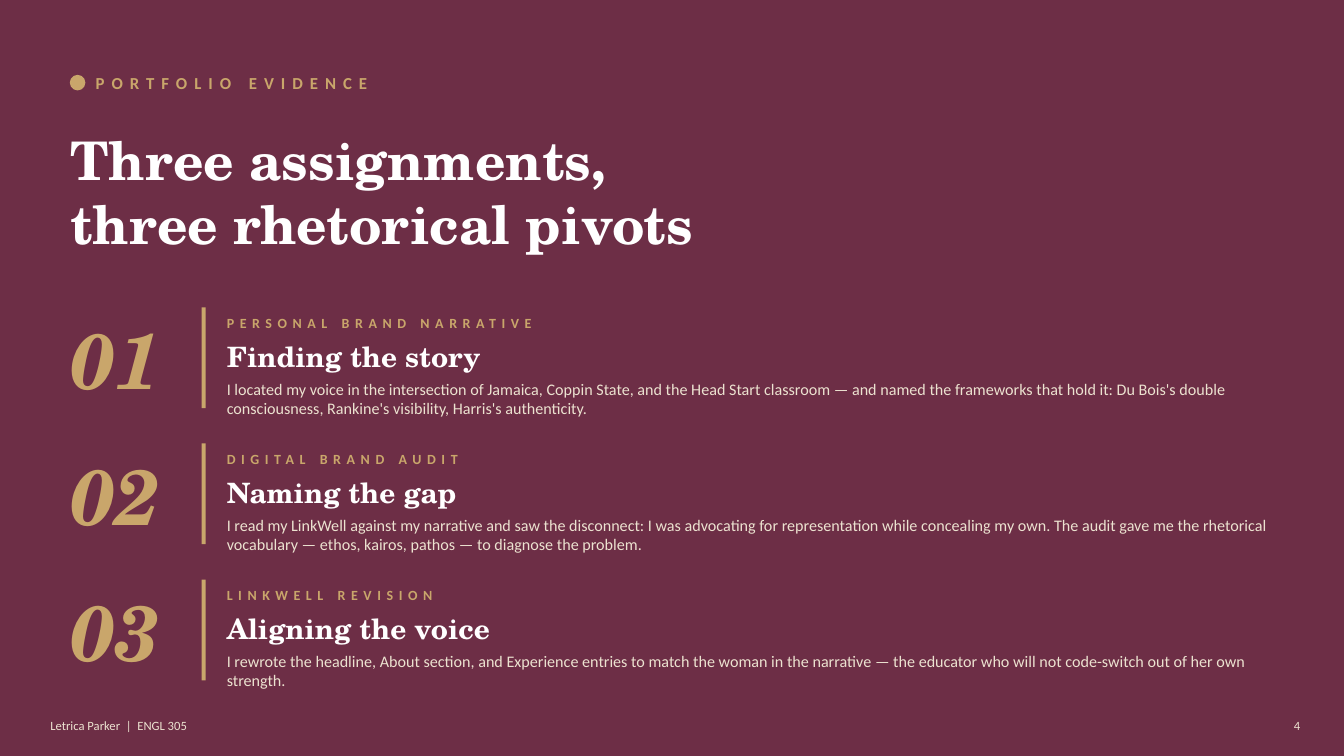
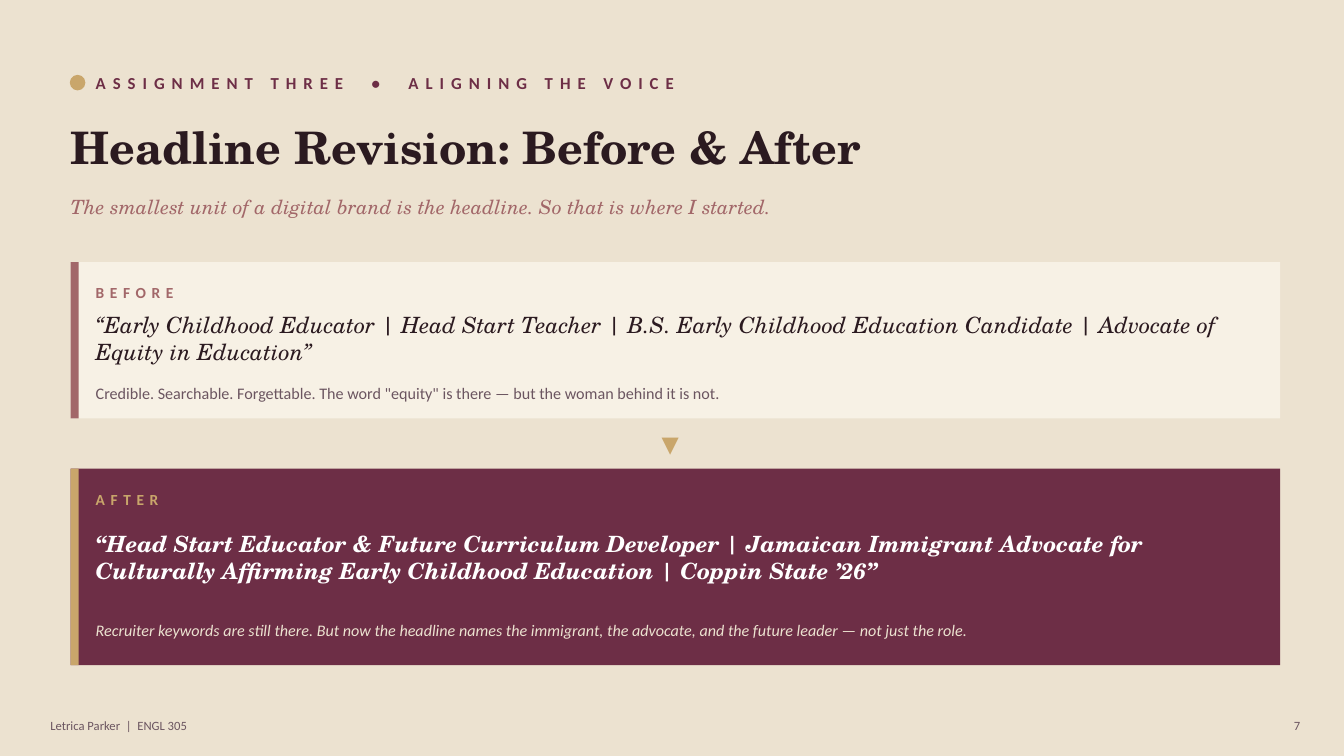
"""Build two portfolio slides: three assignments, and a headline before and after."""
from pptx import Presentation
from pptx import util as u
from pptx.dml.color import RGBColor
from pptx.enum import shapes, text

C = {
    "wine": "6D2E46", "sand": "ECE2D0", "gold": "C9A66B", "rose": "A26769",
    "ink": "2B1A20", "muted": "6B5560", "cream": "F7F1E5", "white": "FFFFFF",
}
SANS, SERIF = "Calibri", "TeX Gyre Schola"
LEFT, INDENT, WIDTH = 50.4, 68.4, 864


def write(s, box, content, size, color, font=SANS, bold=False, italic=False,
          spacing=0, align=text.PP_ALIGN.LEFT, sp=None):
    """Put styled text in a new text box, or in the given placeholder."""
    x, y, w, h = [u.Pt(v) for v in box]
    if sp is None:
        sp = s.shapes.add_textbox(x, y, w, h)
    sp.left, sp.top, sp.width, sp.height = x, y, w, h
    tf = sp.text_frame
    tf.text = content
    tf.word_wrap = True
    tf.auto_size = text.MSO_AUTO_SIZE.NONE
    tf.vertical_anchor = text.MSO_ANCHOR.MIDDLE
    tf.margin_left = tf.margin_right = tf.margin_top = tf.margin_bottom = 0
    for p in tf.paragraphs:
        p.alignment = align
        for r in p.runs:
            r.font.name, r.font.size = font, u.Pt(size)
            r.font.bold, r.font.italic = bold, italic
            r.font.color.rgb = RGBColor.from_string(C[color])
            if spacing:
                r._r.get_or_add_rPr().set("spc", str(spacing * 100))


def draw(s, kind, box, color, outlined=False):
    """Add a filled shape, with an outline of the same colour if asked."""
    sp = s.shapes.add_shape(kind, *[u.Pt(v) for v in box])
    sp.shadow.inherit = False
    sp.fill.solid()
    sp.fill.fore_color.rgb = RGBColor.from_string(C[color])
    if outlined:
        sp.line.color.rgb = RGBColor.from_string(C[color])
        sp.line.width = u.Pt(1)
    else:
        sp.line.fill.background()


RECT, OVAL = shapes.MSO_SHAPE.RECTANGLE, shapes.MSO_SHAPE.OVAL

prs = Presentation()
prs.slide_width, prs.slide_height = u.Pt(960), u.Pt(540)

frames = [
    dict(bg="wine", number="4", footer="sand", eyebrow="PORTFOLIO EVIDENCE",
         accent="gold", title="Three assignments,\nthree rhetorical pivots",
         size=38, height=115.2, color="white"),
    dict(bg="sand", number="7", footer="muted",
         eyebrow="ASSIGNMENT THREE  •  ALIGNING THE VOICE",
         accent="wine", title="Headline Revision: Before & After",
         size=32, height=50.4, color="ink"),
]
for f in frames:
    s = prs.slides.add_slide(prs.slide_layouts[5])
    s.background.fill.solid()
    s.background.fill.fore_color.rgb = RGBColor.from_string(C[f["bg"]])
    write(s, (LEFT, 79.2, WIDTH, f["height"]), f["title"], f["size"], f["color"],
          SERIF, bold=True, sp=s.shapes.title)
    draw(s, OVAL, (LEFT, 54, 10.08, 10.08), "gold", outlined=True)
    write(s, (INDENT, 46.8, 576, 25.2), f["eyebrow"], 12, f["accent"],
          bold=True, spacing=5)
    write(s, (36, 507.6, 432, 21.6), "Letrica Parker  |  ENGL 305", 9, f["footer"])
    write(s, (907.2, 507.6, 21.6, 21.6), f["number"], 9, f["footer"],
          align=text.PP_ALIGN.RIGHT)

s = prs.slides[0]
assignments = [
    ("PERSONAL BRAND NARRATIVE", "Finding the story",
     "I located my voice in the intersection of Jamaica, Coppin State, and the "
     "Head Start classroom — and named the frameworks that hold it: Du Bois's "
     "double consciousness, Rankine's visibility, Harris's authenticity."),
    ("DIGITAL BRAND AUDIT", "Naming the gap",
     "I read my LinkWell against my narrative and saw the disconnect: I was "
     "advocating for representation while concealing my own. The audit gave me "
     "the rhetorical vocabulary — ethos, kairos, pathos — to diagnose the problem."),
    ("LINKWELL REVISION", "Aligning the voice",
     "I rewrote the headline, About section, and Experience entries to match the "
     "woman in the narrative — the educator who will not code-switch out of her "
     "own strength."),
]
for i, (label, heading, body) in enumerate(assignments):
    top = 219.6 + i * 97.2
    write(s, (LEFT, top - 7.2, 93.6, 86.4), f"{i + 1:02}", 56, "gold", SERIF,
          bold=True, italic=True)
    draw(s, RECT, (144, top, 2.88, 72), "gold")
    write(s, (162, top, 756, 21.6), label, 10, "gold", bold=True, spacing=4)
    write(s, (162, top + 20.16, 756, 28.8), heading, 20, "white", SERIF, bold=True)
    write(s, (162, top + 48.96, 748.8, 32.4), body, 11.5, "sand")

s = prs.slides[1]
write(s, (LEFT, 133.2, WIDTH, 28.8),
      "The smallest unit of a digital brand is the headline. So that is where I started.",
      14, "rose", SERIF, italic=True)
cards = [
    dict(label="BEFORE", top=187.2, height=111.6, fill="cream", accent="rose",
         quote="“Early Childhood Educator | Head Start Teacher | B.S. Early Childhood "
               "Education Candidate | Advocate of Equity in Education”",
         quote_h=43.2, quote_color="ink", strong=False,
         note="Credible. Searchable. Forgettable. The word \"equity\" is there — "
              "but the woman behind it is not.",
         note_h=28.8, note_color="muted"),
    dict(label="AFTER", top=334.8, height=140.4, fill="wine", accent="gold",
         quote="“Head Start Educator & Future Curriculum Developer | Jamaican "
               "Immigrant Advocate for Culturally Affirming Early Childhood "
               "Education | Coppin State ’26”",
         quote_h=61.2, quote_color="white", strong=True,
         note="Recruiter keywords are still there. But now the headline names the "
              "immigrant, the advocate, and the future leader — not just the role.",
         note_h=36, note_color="sand"),
]
for c in cards:
    top, quote_top = c["top"], c["top"] + 32.4
    draw(s, RECT, (LEFT, top, WIDTH, c["height"]), c["fill"])
    draw(s, RECT, (LEFT, top, 5.76, c["height"]), c["accent"])
    write(s, (INDENT, top + 10.8, 108, 21.6), c["label"], 11, c["accent"],
          bold=True, spacing=4)
    write(s, (INDENT, quote_top, 828, c["quote_h"]), c["quote"], 16,
          c["quote_color"], SERIF, bold=c["strong"], italic=True)
    write(s, (INDENT, quote_top + c["quote_h"] + 3.6, 828, c["note_h"]), c["note"],
          11.5, c["note_color"], italic=c["strong"])
write(s, (464.4, 306, 28.8, 21.6), "▼", 16, "gold", align=text.PP_ALIGN.CENTER)

prs.save("out.pptx")
